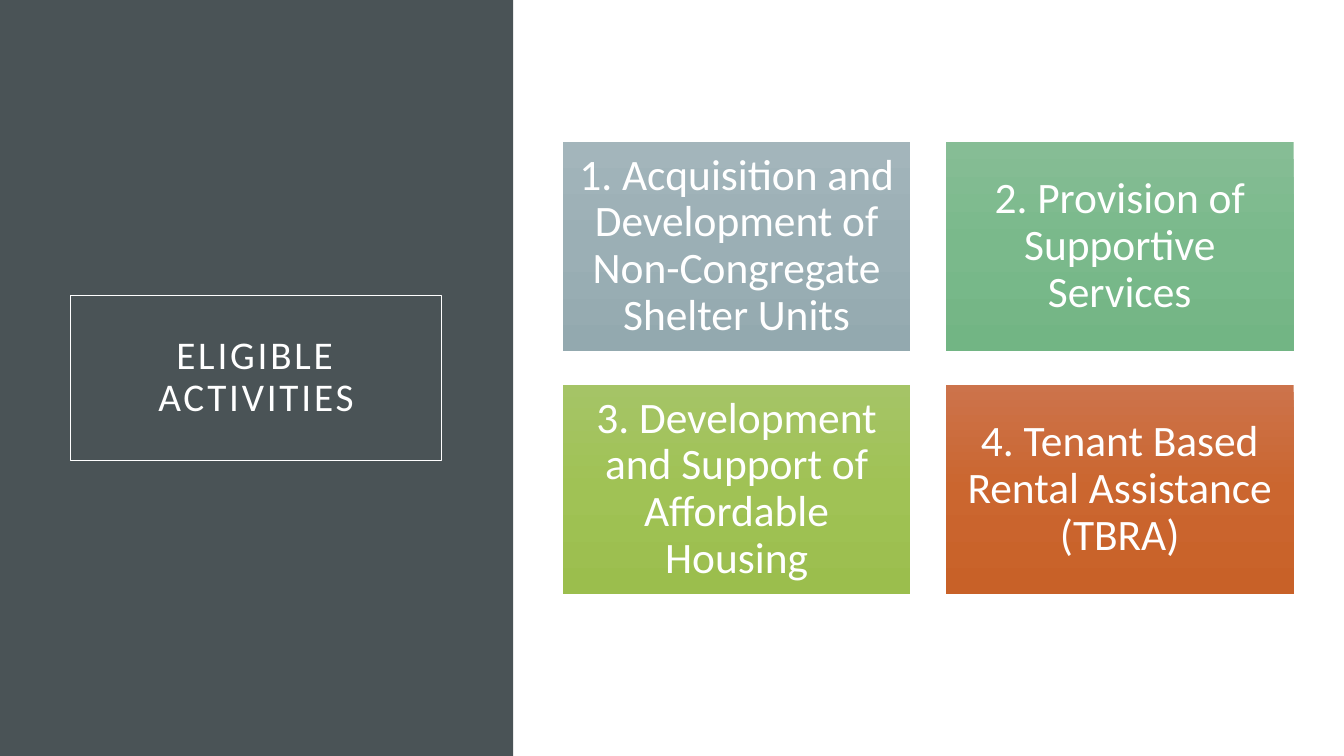
from copy import deepcopy
from pptx import Presentation
from pptx.dml.color import RGBColor
from pptx.enum.shapes import MSO_SHAPE
from pptx.enum.text import MSO_ANCHOR, MSO_AUTO_SIZE, PP_ALIGN
from pptx.oxml.ns import qn
from pptx.util import Inches, Pt


def rgb(color):
    return RGBColor.from_string(color)


def set_text(s, text, size, inset, after):
    tf = s.text_frame
    tf.text = text
    tf.word_wrap = True
    tf.auto_size = MSO_AUTO_SIZE.NONE
    tf.vertical_anchor = MSO_ANCHOR.MIDDLE
    tf.margin_left = tf.margin_right = Inches(inset)
    tf.margin_top = tf.margin_bottom = Inches(inset)
    p = tf.paragraphs[0]
    p.alignment = PP_ALIGN.CENTER
    p.line_spacing = 0.9
    p.space_after = Pt(after)
    p.font.name = "Calibri"
    p.font.size = Pt(size)
    p.font.color.rgb = rgb("FFFFFF")


prs = Presentation()
prs.slide_width = Inches(13.33)
prs.slide_height = Inches(7.5)
slide = prs.slides.add_slide(prs.slide_layouts[5])
shapes = slide.shapes

panel = shapes.add_shape(MSO_SHAPE.RECTANGLE, 0, 0, Inches(5.09), prs.slide_height)
panel.shadow.inherit = False
panel.fill.solid()
panel.fill.fore_color.rgb = rgb("4A5356")
panel.line.fill.background()

title = shapes.title
title.left, title.top = Inches(0.7), Inches(2.93)
title.width, title.height = Inches(3.68), Inches(1.64)
title.line.color.rgb = rgb("FFFFFF")
title.line.width = Pt(0.75)
set_text(title, "ELIGIBLE ACTIVITIES", 28, 0.2, 6)
title.text_frame.paragraphs[0].runs[0].font._element.set("spc", "200")
panel._element.addnext(title._element)

activities = [
    ("1. Acquisition and Development of Non-Congregate Shelter Units", ("A3B5BB", "9BAFB5", "93A9AF")),
    ("2. Provision of Supportive Services", ("86BD95", "7AB98B", "72B584")),
    ("3. Development and Support of Affordable Housing", ("A5C466", "A0C255", "9BBE4D")),
    ("4. Tenant Based Rental Assistance (TBRA)", ("CC734B", "CB662F", "C86128")),
]
width, height = 3.45, 2.07
col_step, row_step = 3.8, 2.41

for i, (text, colors) in enumerate(activities):
    row, col = divmod(i, 2)
    s = shapes.add_shape(
        MSO_SHAPE.RECTANGLE,
        Inches(5.58 + col * col_step),
        Inches(1.41 + row * row_step),
        Inches(width),
        Inches(height),
    )
    s.shadow.inherit = False
    s.line.fill.background()
    s.fill.gradient()
    s.fill.gradient_angle = 270
    stop_list = s._element.spPr.find(".//" + qn("a:gsLst"))
    stop_list.append(deepcopy(stop_list[0]))
    for stop, color, position in zip(s.fill.gradient_stops, colors, (0, 0.5, 1)):
        stop.color.rgb = rgb(color)
        stop.position = position
    set_text(s, text, 31, 0.13, 11)

prs.save("out.pptx")
